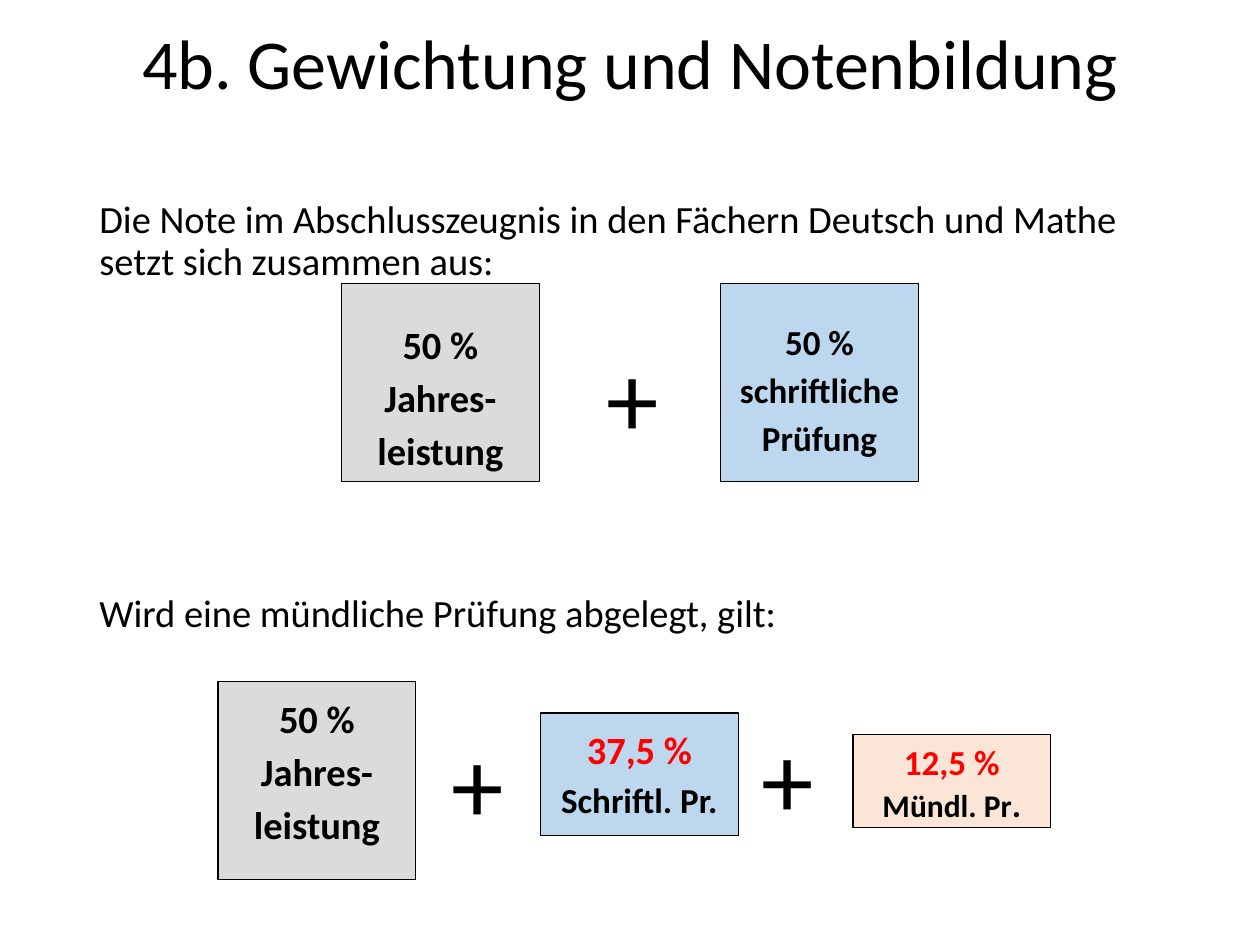
from dataclasses import dataclass

from pptx import Presentation
from pptx.dml.color import RGBColor
from pptx.enum.shapes import MSO_SHAPE
from pptx.enum.text import MSO_ANCHOR, PP_ALIGN
from pptx.util import Inches, Pt


@dataclass(frozen=True)
class Theme:
    font: str = "Calibri"
    black: RGBColor = RGBColor(0, 0, 0)
    red: RGBColor = RGBColor(255, 0, 0)
    grey: RGBColor = RGBColor(0xDB, 0xDB, 0xDB)
    blue: RGBColor = RGBColor(0xBD, 0xD7, 0xEE)
    peach: RGBColor = RGBColor(0xFB, 0xE5, 0xD6)
    title: int = 40
    body: int = 22
    medium: int = 20
    small: int = 18
    plus: int = 60


THEME = Theme()
TILE = 1.57


def write_lines(frame, lines, align=PP_ALIGN.CENTER, spacing=1.15, bold=False):
    frame.word_wrap = True
    for index, (text, size, color) in enumerate(lines):
        para = frame.paragraphs[0] if index == 0 else frame.add_paragraph()
        para.text = text
        para.alignment = align
        para.line_spacing = spacing
        para.font.name = THEME.font
        para.font.size = Pt(size)
        para.font.bold = bold
        para.font.color.rgb = color


def add_text(page, box, text, size, align, spacing, anchor=MSO_ANCHOR.TOP):
    frame = page.shapes.add_textbox(*map(Inches, box)).text_frame
    frame.vertical_anchor = anchor
    write_lines(frame, [(text, size, THEME.black)], align, spacing)


def add_tile(page, box, fill, lines, spacing=1.15, top_inset=0.05):
    tile = page.shapes.add_shape(MSO_SHAPE.RECTANGLE, *map(Inches, box))
    tile.shadow.inherit = False
    tile.fill.solid()
    tile.fill.fore_color.rgb = fill
    tile.line.color.rgb = THEME.black
    tile.line.width = Pt(0.75)
    frame = tile.text_frame
    frame.vertical_anchor = MSO_ANCHOR.TOP
    frame.margin_top = Inches(top_inset)
    write_lines(frame, lines, spacing=spacing, bold=True)
    return frame


def add_plus(page, left, top):
    add_text(page, (left, top, 0.9, 1.12), "+", THEME.plus, PP_ALIGN.CENTER, 1.15)


def add_year_tile(page, left, top, top_inset=0.05):
    lines = [(text, THEME.body, THEME.black) for text in ("50 %", "Jahres-leistung")]
    add_tile(page, (left, top, TILE, TILE), THEME.grey, lines, top_inset=top_inset)


def add_written_formula(page, left, top):
    inset = 0.24
    add_year_tile(page, left, top, inset)
    add_plus(page, left + 1.86, top + 0.19)
    lines = [(text, THEME.medium, THEME.black)
             for text in ("50 %", "schriftliche", "Prüfung")]
    add_tile(page, (left + 3.01, top, TILE, TILE), THEME.blue, lines, top_inset=inset)


def add_oral_formula(page, left, top):
    add_year_tile(page, left, top)
    add_plus(page, left + 1.61, top + 0.09)
    add_tile(page, (left + 2.56, top + 0.25, TILE, 0.97), THEME.blue,
             [("37,5 %", THEME.body, THEME.red),
              ("Schriftl. Pr.", THEME.medium, THEME.black)])
    add_plus(page, left + 4.07, top + 0.05)
    oral = add_tile(page, (left + 5.04, top + 0.42, TILE, 0.74), THEME.peach,
                    [("12,5 %", THEME.medium, THEME.red),
                     ("Mündl. Pr", THEME.small, THEME.black)], spacing=1.0)
    period = oral.paragraphs[1].add_run()
    period.text = "."
    period.font.size = Pt(THEME.medium)


def main():
    deck = Presentation()
    deck.slide_width, deck.slide_height = Inches(10), Inches(7.5)
    page = deck.slides.add_slide(deck.slide_layouts[6])
    left, width = 0.69, 8.62
    add_text(page, (left, 0.17, width, 0.72), "4b. Gewichtung und Notenbildung",
             THEME.title, PP_ALIGN.CENTER, 0.9, MSO_ANCHOR.MIDDLE)
    add_text(page, (left, 1.54, width, 0.75),
             "Die Note im Abschlusszeugnis in den Fächern Deutsch und Mathe "
             "setzt sich zusammen aus:", THEME.body, PP_ALIGN.LEFT, 0.9)
    add_written_formula(page, 2.71, 2.25)
    add_text(page, (left, 4.67, width, 0.45),
             "Wird eine mündliche Prüfung abgelegt, gilt:",
             THEME.body, PP_ALIGN.LEFT, 0.9)
    add_oral_formula(page, 1.73, 5.41)
    deck.save("out.pptx")


if __name__ == "__main__":
    main()
